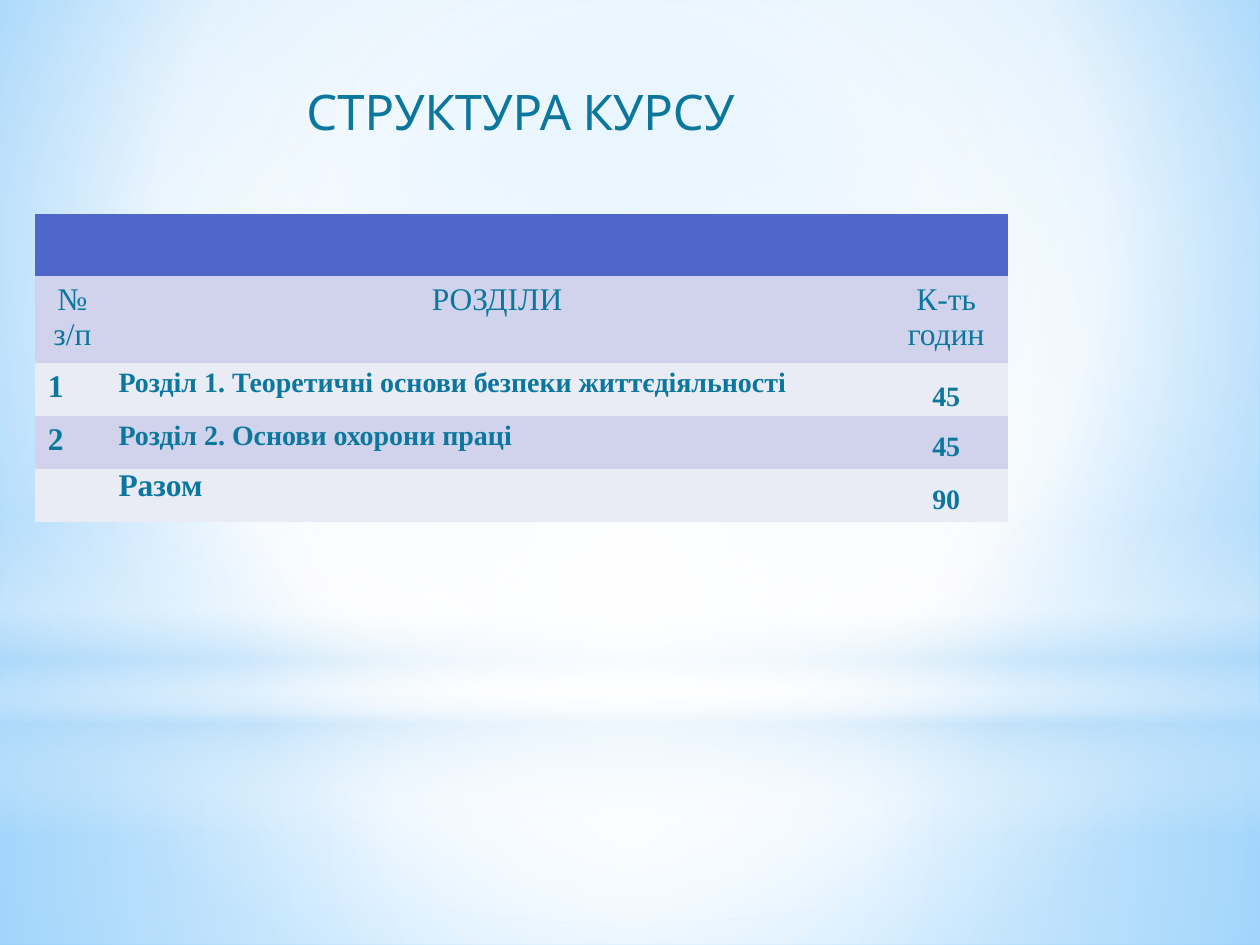
from lxml.etree import SubElement
from pptx import Presentation
from pptx.dml.color import RGBColor
from pptx.enum.shapes import MSO_SHAPE
from pptx.enum.text import MSO_ANCHOR, MSO_AUTO_SIZE, PP_ALIGN
from pptx.oxml.ns import qn
from pptx.util import Cm, Pt

# Content
TITLE = "СТРУКТУРА КУРСУ"
HEADS = ["№ з/п", "РОЗДІЛИ", "К-ть годин"]
PARTS = [
    ("1", "Розділ 1. Теоретичні основи безпеки життєдіяльності", "45"),
    ("2", "Розділ 2. Основи охорони праці", "45"),
    ("", "Разом", "90"),
]
COLS = [1.5, 15.62, 2.49]
ROWS = [1.24, 1.75, 1.07, 1.07, 1.07]

# Look
HUES = {"text": "0C779D", "head": "4E67C8", "dark": "D0D3EB", "light": "E9EBF5",
        "white": "FFFFFF", "pale": "B4DCFA", "sky": "9ED5FF", "blue": "5BB9FF"}
FONT = "Times New Roman"
PLAIN = "{2D5ABB26-0587-4C30-8999-92F81FD0307C}"  # table style without grid
MID = (50, 50, 50, 50)

# Backdrop layers: preset, box in cm, stops (position, hue, opacity), focus
LAYERS = [
    (MSO_SHAPE.RECTANGLE, (0, 14.17, 25.4, 4.88),
     [(0, "white", 91), (37, "white", 76), (100, "pale", 79)], MID),
    (MSO_SHAPE.RECTANGLE, (0, 0, 25.4, 14.17),
     [(0, "white", 89), (48, "white", 62), (100, "pale", 79)], MID),
    (MSO_SHAPE.RECTANGLE, (0, 10.46, 25.4, 6.35),
     [(0, "white", 0), (29, "white", 30), (45, "pale", 40),
      (55, "white", 26), (65, "pale", 60), (100, "white", 0)], None),
    (MSO_SHAPE.OVAL, (0, 4.45, 25.4, 14.17),
     [(0, "white", 100), (56, "white", 0)], MID),
]


def blend(fill, root, stops, focus):
    """Fill with a circular gradient, or a downward one without a focus."""
    fill.gradient()
    grad = root.find(".//" + qn("a:gradFill"))
    for old in list(grad):
        grad.remove(old)
    steps = SubElement(grad, qn("a:gsLst"))
    for pos, hue, seen in stops:
        stop = SubElement(steps, qn("a:gs"), pos=str(pos * 1000))
        tint = SubElement(stop, qn("a:srgbClr"), val=HUES[hue])
        if seen < 100:
            SubElement(tint, qn("a:alpha"), val=str(seen * 1000))
    if focus:
        ring = SubElement(grad, qn("a:path"), path="circle")
        sides = {side: str(part * 1000) for side, part in zip("ltrb", focus)}
        SubElement(ring, qn("a:fillToRect"), **sides)
    else:
        SubElement(grad, qn("a:lin"), ang="5400000", scaled="0")


def write(frame, text, size, font=FONT, bold=False, align=PP_ALIGN.LEFT):
    para = frame.paragraphs[0]
    para.alignment = align
    run = para.add_run()
    run.text = text
    run.font.name, run.font.size, run.font.bold = font, Pt(size), bold
    run.font.color.rgb = RGBColor.from_string(HUES["text"])
    return para


def trim(cell):
    cell.margin_left = cell.margin_right = Cm(0.18)
    cell.margin_top = cell.margin_bottom = 0


deck = Presentation()
deck.slide_width, deck.slide_height = Cm(25.4), Cm(19.05)
slide = deck.slides.add_slide(deck.slide_layouts[5])

# Background
blend(slide.background.fill, slide.element,
      [(0, "sky", 100), (60, "white", 100), (100, "blue", 100)], (20, 10, 20, 60))
for kind, box, stops, focus in LAYERS:
    layer = slide.shapes.add_shape(kind, *map(Cm, box))
    layer.shadow.inherit = False
    layer.line.fill.background()
    blend(layer.fill, layer.element, stops, focus)

# Table
grid = slide.shapes.add_table(len(ROWS), len(COLS), Cm(0.71), Cm(4.32),
                              Cm(sum(COLS)), Cm(sum(ROWS)))
table = grid.table
table._tbl.tblPr.find(qn("a:tableStyleId")).text = PLAIN
for col, width in zip(table.columns, COLS):
    col.width = Cm(width)
for row, height in zip(table.rows, ROWS):
    row.height = Cm(height)
for i, row in enumerate(table.rows):
    hue = "head" if i == 0 else "dark" if i % 2 else "light"
    for cell in row.cells:
        cell.fill.solid()
        cell.fill.fore_color.rgb = RGBColor.from_string(HUES[hue])
table.cell(0, 0).merge(table.cell(0, 2))
for j, head in enumerate(HEADS):
    write(table.cell(1, j).text_frame, head, 18, align=PP_ALIGN.CENTER)

# Course parts and total
for i, (num, name, hours) in enumerate(PARTS, 2):
    first, mid, last = table.rows[i].cells
    trim(mid)
    trim(last)
    if num:
        write(first.text_frame, num, 18, bold=True)
        para = write(mid.text_frame, name, 16, bold=True, align=PP_ALIGN.JUSTIFY)
        para.line_spacing, para.space_after = 1.15, Pt(10)
    else:
        write(mid.text_frame, name, 18, bold=True)
    para = write(last.text_frame, hours, 16, bold=True, align=PP_ALIGN.CENTER)
    para.line_spacing = 1.5
    if i == 2:
        para.space_after = Pt(10)
        last.vertical_anchor = MSO_ANCHOR.MIDDLE

# Title, in front
title = slide.shapes.title
title.left, title.top, title.width, title.height = map(Cm, (4.14, 1.52, 12.7, 1.45))
frame = title.text_frame
frame.word_wrap = True
frame.auto_size = MSO_AUTO_SIZE.SHAPE_TO_FIT_TEXT
frame.vertical_anchor = MSO_ANCHOR.TOP
write(frame, TITLE, 28, font="Karla", align=PP_ALIGN.CENTER)
slide.shapes._spTree.append(title.element)

deck.save("out.pptx")
